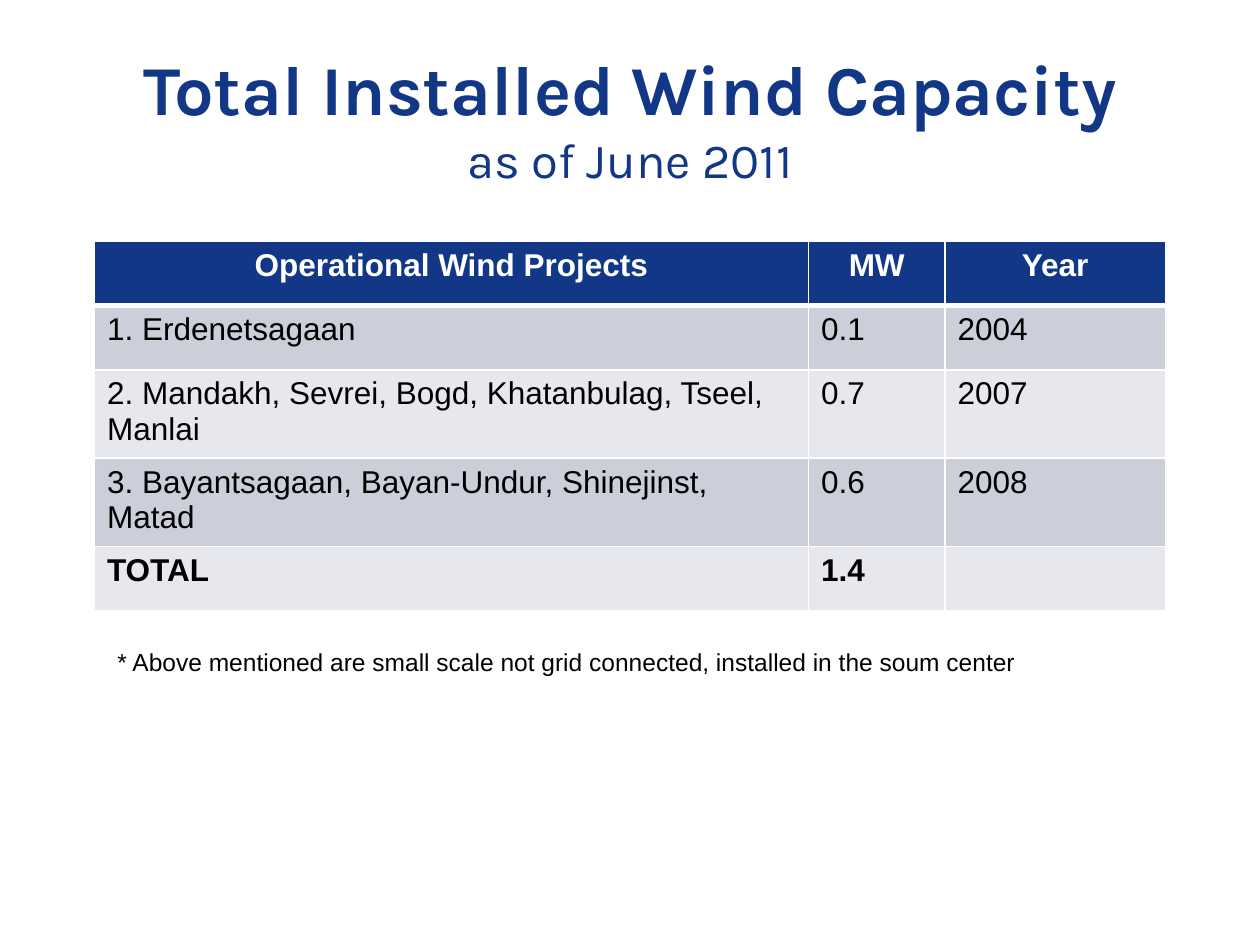
from lxml.etree import SubElement
from pptx import Presentation
from pptx.dml.color import RGBColor
from pptx.enum.text import MSO_ANCHOR, MSO_AUTO_SIZE, PP_ALIGN
from pptx.oxml.ns import qn
from pptx.util import Pt

NAVY = RGBColor(0x12, 0x37, 0x87)
WHITE = RGBColor(0xFF, 0xFF, 0xFF)
BLACK = RGBColor(0x00, 0x00, 0x00)
DARK_BAND = RGBColor(0xCC, 0xCE, 0xD9)
LIGHT_BAND = RGBColor(0xE7, 0xE8, 0xED)


def style_font(font, name, size, color, bold=False):
    font.name = name
    font.size = Pt(size)
    font.color.rgb = color
    font.bold = bold


def add_border(cell, side, width):
    line = SubElement(cell._tc.get_or_add_tcPr(), qn(f"a:ln{side}"), w=str(Pt(width)))
    fill = SubElement(line, qn("a:solidFill"))
    SubElement(fill, qn("a:srgbClr"), val=str(WHITE))


presentation = Presentation()
presentation.slide_width = Pt(720)
presentation.slide_height = Pt(540)
slide = presentation.slides.add_slide(presentation.slide_layouts[6])

# Title and date
title = slide.shapes.add_textbox(Pt(36), Pt(21.6), Pt(648), Pt(90))
title.text_frame.word_wrap = True
title.text_frame.vertical_anchor = MSO_ANCHOR.MIDDLE
paragraph = title.text_frame.paragraphs[0]
paragraph.text = "Total Installed Wind Capacity\vas of June 2011"
paragraph.alignment = PP_ALIGN.CENTER
heading, date = paragraph.runs
style_font(heading.font, "Karla", 40, NAVY, bold=True)
style_font(date.font, "Karla", 28, NAVY)

# Table of projects
rows = [
    ("Operational Wind Projects", "MW", "Year"),
    ("1. Erdenetsagaan", "0.1", "2004"),
    ("2. Mandakh, Sevrei, Bogd, Khatanbulag, Tseel, Manlai", "0.7", "2007"),
    ("3. Bayantsagaan, Bayan-Undur, Shinejinst, Matad", "0.6", "2008"),
    ("TOTAL", "1.4", ""),
]
column_widths = [408, 78, 126]
row_height = 36.72
table = slide.shapes.add_table(
    len(rows), len(column_widths), Pt(54), Pt(138),
    Pt(sum(column_widths)), Pt(row_height * len(rows)),
).table
for column, width in zip(table.columns, column_widths):
    column.width = Pt(width)

for row_index, values in enumerate(rows):
    table.rows[row_index].height = Pt(row_height)
    is_header = row_index == 0
    is_total = row_index == len(rows) - 1
    band = NAVY if is_header else DARK_BAND if row_index % 2 else LIGHT_BAND
    for column_index, value in enumerate(values):
        cell = table.cell(row_index, column_index)
        # The rule under the header is heavier than the others
        top = 3 if row_index == 1 else 1
        bottom = 3 if is_header else 1
        for side, width in (("L", 1), ("R", 1), ("T", top), ("B", bottom)):
            add_border(cell, side, width)
        cell.fill.solid()
        cell.fill.fore_color.rgb = band
        paragraph = cell.text_frame.paragraphs[0]
        paragraph.text = value
        paragraph.alignment = PP_ALIGN.CENTER if is_header else PP_ALIGN.LEFT
        style_font(paragraph.font, "Arial", 18, WHITE if is_header else BLACK,
                   bold=is_header or is_total)
        for run in paragraph.runs:
            style_font(run.font, "Arial", 18, WHITE if is_header else BLACK,
                       bold=is_header or is_total)

# Footnote
footnote = slide.shapes.add_textbox(Pt(60), Pt(366), Pt(529), Pt(24.5))
footnote.text_frame.word_wrap = False
footnote.text_frame.auto_size = MSO_AUTO_SIZE.SHAPE_TO_FIT_TEXT
paragraph = footnote.text_frame.paragraphs[0]
paragraph.text = "* Above mentioned are small scale not grid connected, installed in the soum center"
style_font(paragraph.runs[0].font, "Arial", 14, BLACK)

presentation.save("out.pptx")
